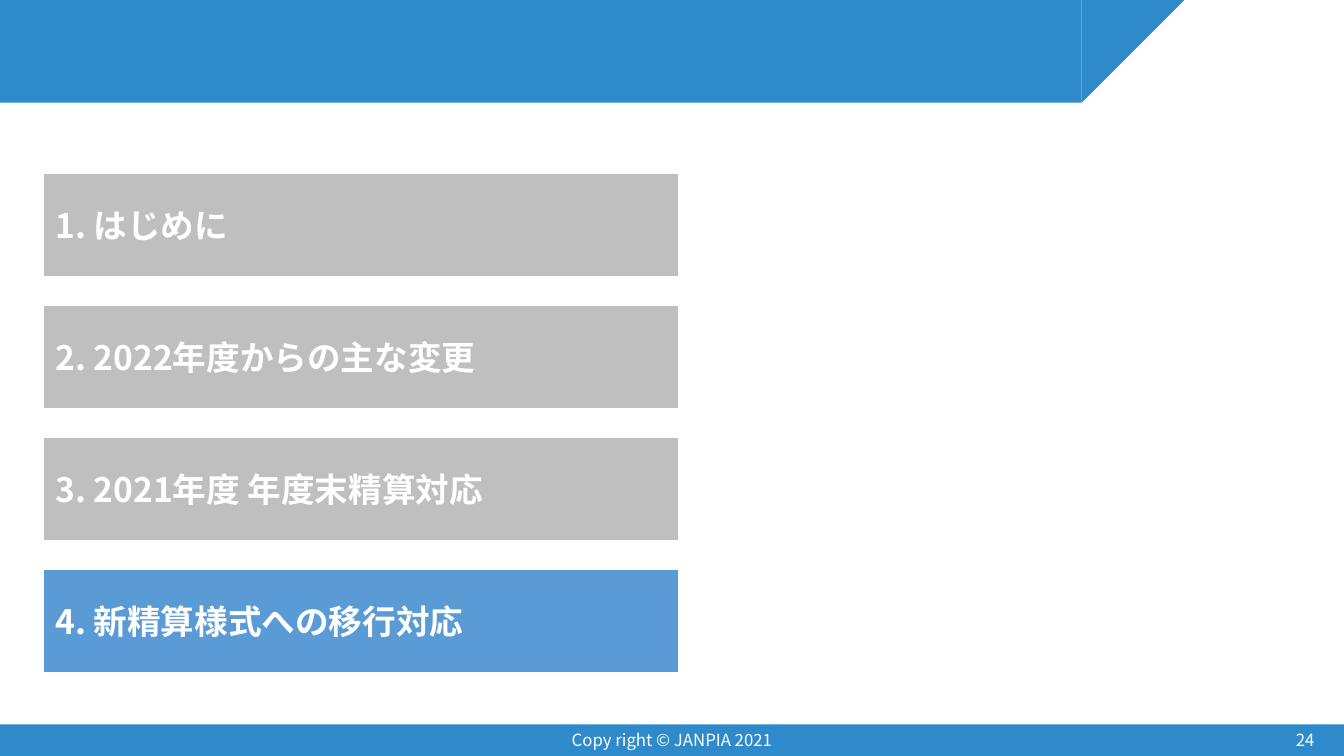
from lxml.etree import SubElement
from pptx import Presentation
from pptx.dml.color import RGBColor
from pptx.enum.shapes import MSO_SHAPE
from pptx.enum.text import MSO_ANCHOR, PP_ALIGN
from pptx.oxml.ns import qn
from pptx.util import Pt

FONT = "Noto Sans CJK JP"
WHITE, BLUE, GRAY, ACTIVE = "FFFFFF", "2E8ACB", "BFBFBF", "5B9BD5"
WIDTH, HEIGHT = 960, 540
AGENDA = ["1. はじめに", "2. 2022年度からの主な変更",
          "3. 2021年度 年度末精算対応", "4. 新精算様式への移行対応"]
CURRENT = 3


def color(value):
    return RGBColor.from_string(value)


def add_block(slide, kind, x, y, w, h, fill, line=None):
    sp = slide.shapes.add_shape(kind, Pt(x), Pt(y), Pt(w), Pt(h))
    sp.shadow.inherit = False
    sp.fill.solid()
    sp.fill.fore_color.rgb = color(fill)
    if line:
        sp.line.color.rgb = color(line)
        sp.line.width = Pt(0.75)
    else:
        sp.line.fill.background()
    return sp


def write(sp, text, size=12, bold=False, align=PP_ALIGN.LEFT, wrap=True):
    tf = sp.text_frame
    tf.word_wrap = wrap
    tf.vertical_anchor = MSO_ANCHOR.MIDDLE
    p = tf.paragraphs[0]
    p.alignment = align
    r = p.add_run()
    r.text = text
    r.font.name = FONT
    r.font.size = Pt(size)
    r.font.bold = bold
    r.font.color.rgb = color(WHITE)
    SubElement(r.font._element, qn("a:ea")).set("typeface", FONT)
    return tf


def add_header(slide, x, y, w, h):
    """Draw a band that ends in a slanted corner as wide as it is high."""
    add_block(slide, MSO_SHAPE.RECTANGLE, x, y, w - h, h, BLUE)
    corner = add_block(slide, MSO_SHAPE.RIGHT_TRIANGLE, x + w - h, y, h, h, BLUE)
    corner.rotation = 90


def add_footer(slide, x, y, w, h):
    add_block(slide, MSO_SHAPE.RECTANGLE, x, y, w, h, BLUE)
    labels = [("24", x + w - 230, 216, PP_ALIGN.RIGHT),
              ("Copy right © JANPIA 2021", x + (w - 324) / 2, 324, PP_ALIGN.CENTER)]
    for text, left, width, align in labels:
        box = slide.shapes.add_textbox(Pt(left), Pt(y - 3.5), Pt(width), Pt(28.8))
        write(box, text, align=align)


def add_agenda(slide, x, y, w, h, items, current, gap=21):
    """Stack the items in equal bars and highlight the current one."""
    bar = (h - gap * (len(items) - 1)) / len(items)
    for i, item in enumerate(items):
        sp = add_block(slide, MSO_SHAPE.RECTANGLE, x, y + i * (bar + gap), w, bar,
                       ACTIVE if i == current else GRAY, line=WHITE)
        tf = write(sp, item, size=24, bold=True, wrap=False)
        tf.margin_left = tf.margin_right = Pt(8.5)
        tf.margin_top = tf.margin_bottom = 0


def main():
    prs = Presentation()
    prs.slide_width, prs.slide_height = Pt(WIDTH), Pt(HEIGHT)
    slide = prs.slides.add_slide(prs.slide_layouts[6])
    add_footer(slide, 0, 517.5, WIDTH, 22.5)
    add_header(slide, 0, 0, 846, 73.4)
    add_agenda(slide, 31, 124, 453.6, 356.2, AGENDA, CURRENT)
    prs.save("out.pptx")


if __name__ == "__main__":
    main()
